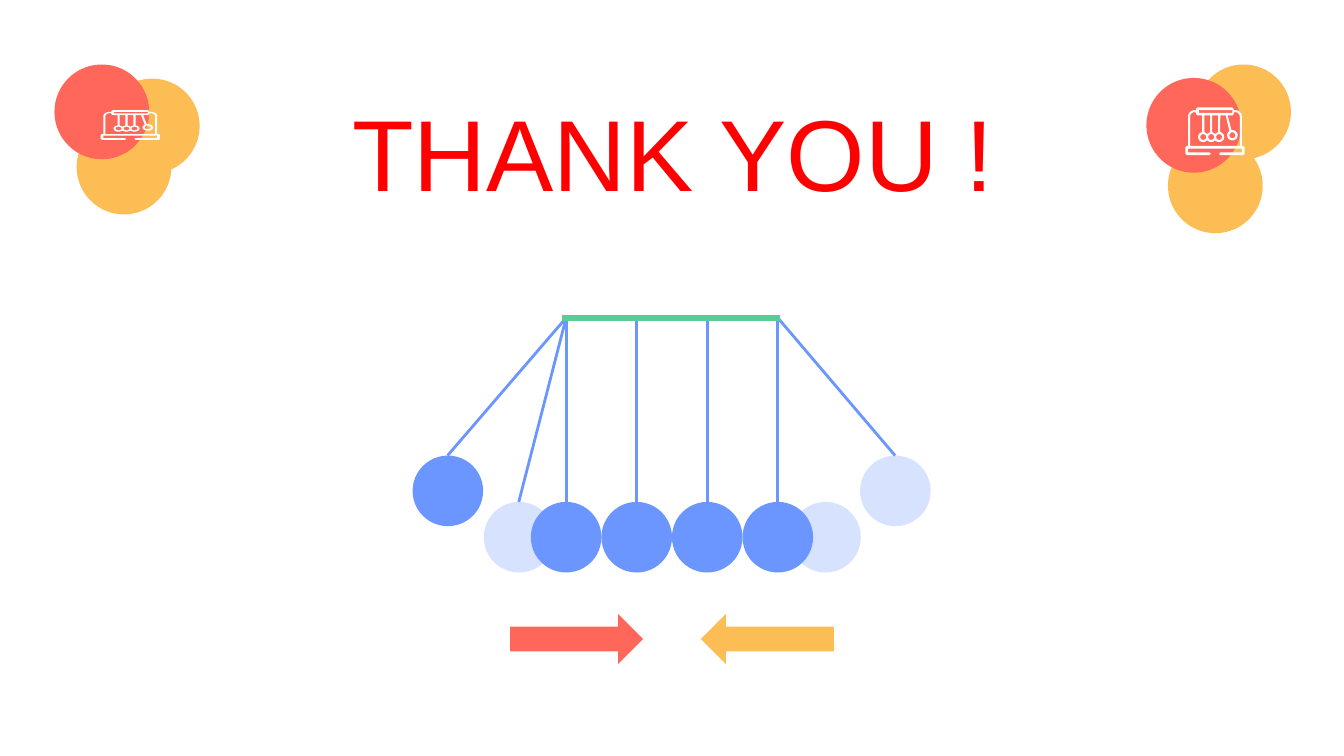
from dataclasses import dataclass
from math import cos, radians, sin

from lxml import etree
from pptx import Presentation
from pptx.dml.color import RGBColor
from pptx.enum.shapes import MSO_CONNECTOR, MSO_SHAPE
from pptx.enum.text import MSO_ANCHOR, MSO_AUTO_SIZE, PP_ALIGN
from pptx.oxml.ns import qn
from pptx.util import Inches, Pt

OVAL = MSO_SHAPE.OVAL
RIGHT, LEFT = MSO_SHAPE.RIGHT_ARROW, MSO_SHAPE.LEFT_ARROW
STRAIGHT = MSO_CONNECTOR.STRAIGHT

# The slide is 16:9, on a grid of 1000 columns.
COLS = 1000
ROWS = COLS * 9 / 16
CELL = Inches(0.01)


@dataclass(frozen=True)
class Theme:
    font: str = "Arial"
    title: str = "FF0000"
    ball: str = "6B96FF"
    ghost: str = "A7C0FF"
    beam: str = "5BCC97"
    coral: str = "FF675A"
    amber: str = "FDBD55"
    icon: str = "FFFFFF"
    size: int = 54
    string: float = 1.5
    bar: float = 3
    alpha: int = 45


@dataclass(frozen=True)
class Box:
    x: float
    y: float
    w: float
    h: float


@dataclass(frozen=True)
class Disc:
    x: float
    y: float
    size: float
    color: str
    alpha: int = 100


@dataclass(frozen=True)
class Line:
    x1: float
    y1: float
    x2: float
    y2: float
    color: str
    width: float


Points = list[tuple[float, float]]
LOOK = Theme()


def grid(value: float) -> int:
    return round(value * CELL)


def paint(shape, color: str, alpha: int = 100) -> None:
    shape.shadow.inherit = False
    shape.line.fill.background()
    shape.fill.solid()
    shape.fill.fore_color.rgb = RGBColor.from_string(color)
    if alpha < 100:
        tone = shape.fill._xPr.find(qn("a:solidFill"))[0]
        etree.SubElement(tone, qn("a:alpha")).set("val", str(alpha * 1000))


def draw_shape(shapes, kind, box: Box, color: str, alpha: int = 100) -> None:
    shape = shapes.add_shape(kind, *map(grid, (box.x, box.y, box.w, box.h)))
    paint(shape, color, alpha)


def draw_disc(shapes, disc: Disc) -> None:
    box = Box(disc.x, disc.y, disc.size, disc.size)
    draw_shape(shapes, OVAL, box, disc.color, disc.alpha)


def draw_line(shapes, line: Line) -> None:
    ends = map(grid, (line.x1, line.y1, line.x2, line.y2))
    link = shapes.add_connector(STRAIGHT, *ends)
    link.line.color.rgb = RGBColor.from_string(line.color)
    link.line.width = Pt(line.width)
    etree.SubElement(link._element.spPr, qn("a:effectLst"))


def arc(x: float, y: float, r: float, start: int, end: int) -> Points:
    """Points on a circle, with angles in degrees, clockwise from the right."""
    steps = max(4, abs(end - start) // 12)
    turns = [radians(start + (end - start) * i / steps) for i in range(steps + 1)]
    return [(x + r * cos(t), y + r * sin(t)) for t in turns]


def icon_loops() -> list[Points]:
    """Outlines of the cradle icon on a grid of 44 by 36; inner loops are holes."""
    gap, first, low = 5.9, 13.3, 22.3
    balls = [first + gap * i for i in range(3)]
    swing = (35, 21)
    outer = [(8, 1), (9, 0), (35, 0), (36, 1), (36, 2), *arc(37, 7, 5, -90, 0),
             (42, 29), (43, 29), (44, 30), (44, 35), (43, 36), (26, 36), (25, 35),
             (26, 34), (42, 34), (42, 31), (2, 31), (2, 34), (18, 34), (19, 35),
             (18, 36), (1, 36), (0, 35), (0, 30), (1, 29), (2, 29),
             *arc(7, 7, 5, 180, 270), (8, 2)]
    inner = [(36, 4), *arc(37, 7, 3.5, -90, 0), (40.5, 29), (3.5, 29),
             *arc(7, 7, 3.5, 180, 270), (8, 4), (8, 5), (9, 6), (12.5, 6),
             *arc(balls[0], low, 3.8, -102, -320), *arc(balls[1], low, 3.8, 140, 40),
             *arc(balls[2], low, 3.8, 140, -78), (26, 6), (30, 6),
             *arc(*swing, 3.9, -125, -460), (31.5, 6), (35, 6), (36, 5)]
    slot = [(10, 2), (35, 2), (35, 4), (10, 4)]
    gaps = [[(x + 0.8, 6), (x + gap - 0.8, 6), (x + gap - 0.8, 18.6),
             (x + gap / 2, 20), (x + 0.8, 18.6)] for x in balls[:2]]
    holes = [arc(x, y, 2.2, 0, 360) for x, y in [*((b, low) for b in balls), swing]]
    return [outer, inner, slot, *gaps, *holes]


def draw_icon(shapes, box: Box) -> None:
    loops = [[(grid(box.x + x * box.w / 44), grid(box.y + y * box.h / 36))
              for x, y in loop] for loop in icon_loops()]
    pen = shapes.build_freeform(*loops[0][0])
    pen.add_line_segments(loops[0][1:])
    for loop in loops[1:]:
        pen.move_to(*loop[0])
        pen.add_line_segments(loop[1:])
    paint(pen.convert_to_shape(), LOOK.icon)


def draw_badge(shapes, spots: Points, icon: Box) -> None:
    for (x, y), color in zip(spots, (LOOK.amber, LOOK.amber, LOOK.coral)):
        draw_disc(shapes, Disc(x, y, 70.5, color))
    draw_icon(shapes, icon)


def draw_cradle(shapes) -> None:
    size, left, low, high, top = 52.5, 395, 373.5, 339, 236.5
    rest = [left + size * i for i in range(4)]
    mids = [x + size / 2 for x in rest]
    discs = [Disc(x, low, size, LOOK.ghost, LOOK.alpha) for x in (360, 588)]
    discs += [Disc(x, low, size, LOOK.ball) for x in rest]
    discs += [Disc(640, high, size, LOOK.ghost, LOOK.alpha),
              Disc(307, high, size, LOOK.ball)]
    for disc in discs:
        draw_disc(shapes, disc)
    ends = [(x, x, low) for x in mids]
    ends += [(mids[0], 333, high), (mids[3], 666, high), (mids[0], 386, low)]
    for start, end, foot in ends:
        draw_line(shapes, Line(start, top, end, foot, LOOK.ball, LOOK.string))
    draw_line(shapes, Line(418, top, 580.5, top, LOOK.beam, LOOK.bar))
    draw_shape(shapes, RIGHT, Box(379.5, 457, 99, 37), LOOK.coral)
    draw_shape(shapes, LEFT, Box(521.5, 457, 99, 37), LOOK.amber)


def write_title(title, box: Box) -> None:
    title.left, title.top, title.width, title.height = map(
        grid, (box.x, box.y, box.w, box.h))
    frame = title.text_frame
    frame.word_wrap = True
    frame.auto_size = MSO_AUTO_SIZE.NONE
    frame.vertical_anchor = MSO_ANCHOR.TOP
    para = frame.paragraphs[0]
    para.alignment = PP_ALIGN.CENTER
    run = para.add_run()
    run.text = "THANK YOU !"
    run.font.name = LOOK.font
    run.font.size = Pt(LOOK.size)
    run.font.color.rgb = RGBColor.from_string(LOOK.title)


def main() -> None:
    deck = Presentation()
    deck.slide_width, deck.slide_height = grid(COLS), grid(ROWS)
    slide = deck.slides.add_slide(deck.slide_layouts[5])
    shapes = slide.shapes
    draw_cradle(shapes.add_group_shape().shapes)
    write_title(shapes.title, Box(176, 62.5, 650, 101))
    draw_badge(shapes, [(57, 89), (78, 58.5), (40.5, 48)], Box(75, 82, 44, 22))
    draw_badge(shapes, [(869, 103), (890, 48), (853, 58)], Box(882, 80, 44, 35.5))
    deck.save("out.pptx")


if __name__ == "__main__":
    main()
